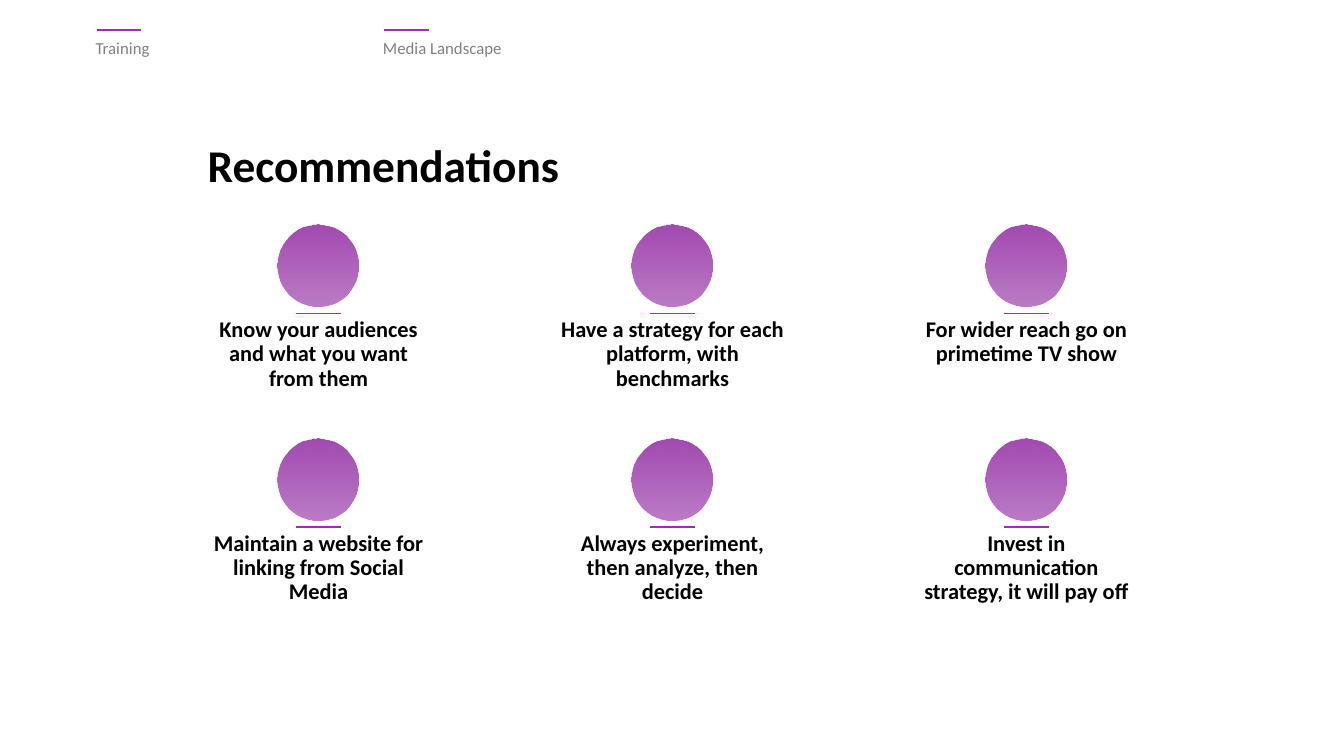
from lxml.etree import SubElement
from pptx import Presentation
from pptx.dml.color import RGBColor
from pptx.enum.shapes import MSO_CONNECTOR, MSO_SHAPE
from pptx.enum.text import MSO_ANCHOR, PP_ALIGN
from pptx.oxml.ns import qn
from pptx.util import Inches, Pt

COLORS = {"circle": "A24AB1", "rule": "9F2EB2", "header": "808080", "text": "000000"}
HEADERS = ["Training", "Media Landscape"]
RECOMMENDATIONS = [
    "Know your audiences and what you want from them",
    "Have a strategy for each platform, with benchmarks",
    "For wider reach go on primetime TV show",
    "Maintain a website for linking from Social Media",
    "Always experiment, then analyze, then decide",
    "Invest in communication strategy, it will pay off",
]


def write_text(shape, text, size, color="text", bold=False,
               align=PP_ALIGN.LEFT, anchor=MSO_ANCHOR.TOP):
    frame = shape.text_frame
    frame.word_wrap = True
    frame.vertical_anchor = anchor
    paragraph = frame.paragraphs[0]
    paragraph.alignment = align
    paragraph.line_spacing = 0.9
    paragraph.space_before = Pt(0)
    run = paragraph.add_run()
    run.text = text
    run.font.name = "Calibri"
    run.font.size = Pt(size)
    run.font.bold = bold
    run.font.color.rgb = RGBColor.from_string(COLORS[color])


def add_short_rule(slide, left, top):
    rule = slide.shapes.add_connector(
        MSO_CONNECTOR.STRAIGHT, Inches(left), Inches(top), Inches(left + 0.44), Inches(top))
    rule.line.color.rgb = RGBColor.from_string(COLORS["rule"])
    rule.line.width = Pt(1.25)
    SubElement(rule._element.spPr, qn("a:effectLst"))


presentation = Presentation()
presentation.slide_width = Inches(13.33)
presentation.slide_height = Inches(7.5)
slide = presentation.slides.add_slide(presentation.slide_layouts[5])

title = slide.shapes.title
title.left, title.top = Inches(1.96), Inches(1.36)
title.width, title.height = Inches(4.83), Inches(0.61)
write_text(title, "Recommendations", 32.4, bold=True, anchor=MSO_ANCHOR.MIDDLE)

for index, text in enumerate(HEADERS):
    left = 0.85 + index * 2.85
    add_short_rule(slide, left + 0.11, 0.3)
    header = slide.shapes.add_textbox(Inches(left), Inches(0.35), Inches(2.53), Inches(0.56))
    write_text(header, text, 12, color="header", align=PP_ALIGN.JUSTIFY)

for index, text in enumerate(RECOMMENDATIONS):
    row, column = divmod(index, 3)
    left = 1.94 + column * 3.51
    top = 2.23 + row * 2.12

    circle = slide.shapes.add_shape(
        MSO_SHAPE.OVAL, Inches(left + 0.81), Inches(top), Inches(0.81), Inches(0.81))
    circle.shadow.inherit = False
    circle.line.fill.background()
    circle.fill.gradient()
    circle.fill.gradient_angle = 270
    for stop, position in zip(circle.fill.gradient_stops, (0, 1)):
        stop.position = position
        stop.color.rgb = RGBColor.from_string(COLORS["circle"])
    last_color = circle._element.spPr.findall(".//" + qn("a:srgbClr"))[-1]
    SubElement(last_color, qn("a:alpha"), val="72000")

    add_short_rule(slide, left + 1, top + 0.88)
    caption = slide.shapes.add_textbox(
        Inches(left), Inches(top + 0.88), Inches(2.44), Inches(0.83))
    write_text(caption, text, 16, bold=True, align=PP_ALIGN.CENTER)

presentation.save("out.pptx")
